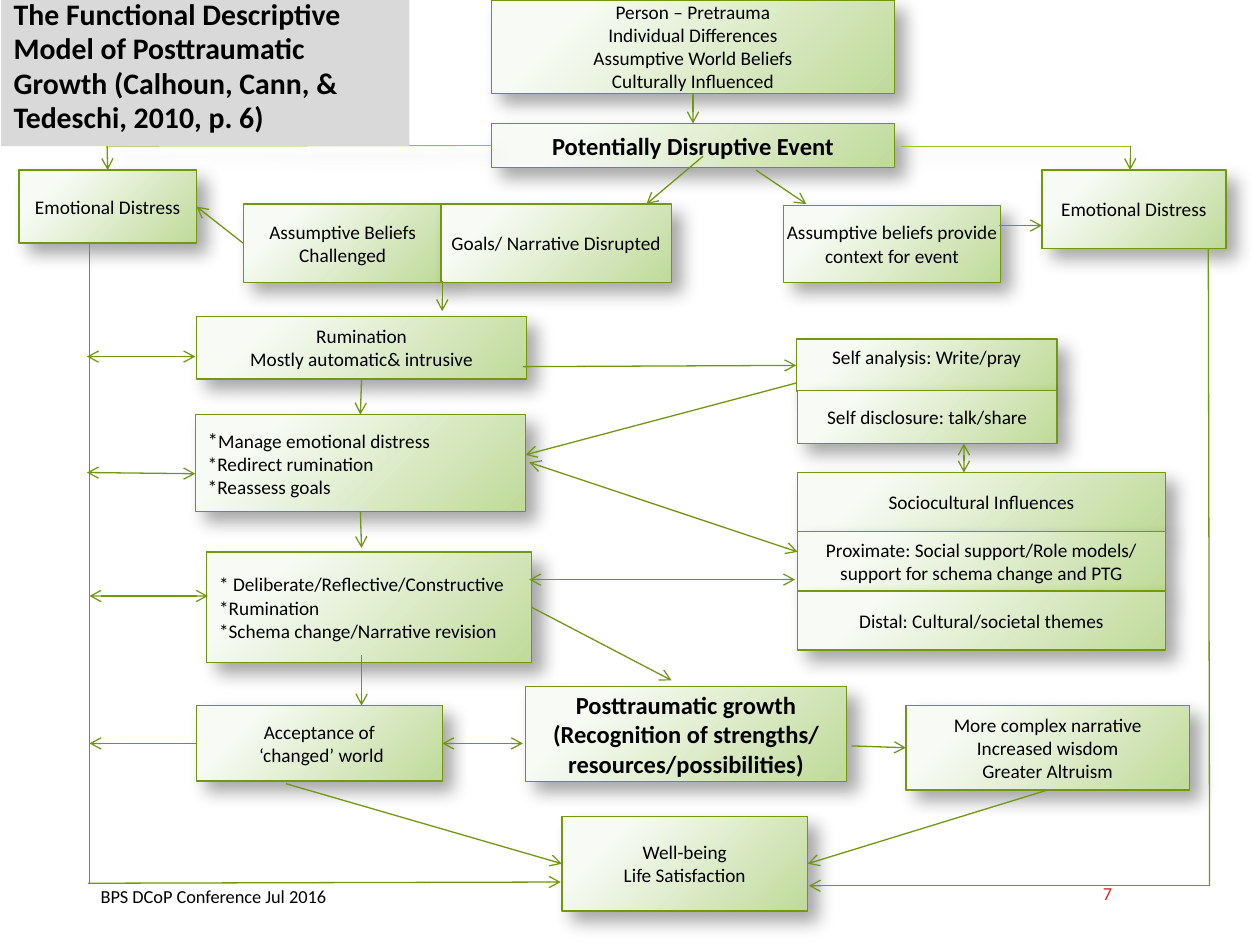
from math import dist
from pptx import Presentation
from pptx.dml.color import RGBColor
from pptx.enum.shapes import MSO_CONNECTOR, MSO_SHAPE
from pptx.enum.text import MSO_ANCHOR, PP_ALIGN
from pptx.oxml import parse_xml
from pptx.oxml.ns import nsdecls
from pptx.util import Inches, Pt

GREEN = "719713"
LIME = "98C723"
ALIGN = {"left": PP_ALIGN.LEFT, "center": PP_ALIGN.CENTER}
ANCHOR = {"top": MSO_ANCHOR.TOP, "middle": MSO_ANCHOR.MIDDLE,
          "bottom": MSO_ANCHOR.BOTTOM}

BOXES = [
    (3.9, 0, 3.2, 0.74, "Person – Pretrauma\nIndividual Differences\n"
     "Assumptive World Beliefs\nCulturally Influenced", {}),
    (3.9, 0.98, 3.2, 0.35, "Potentially Disruptive Event",
     {"size": 14, "bold": True}),
    (1.93, 1.62, 1.58, 0.62, "Assumptive Beliefs\nChallenged", {}),
    (3.5, 1.62, 1.83, 0.62, "Goals/ Narrative Disrupted", {}),
    (6.22, 1.63, 1.72, 0.61,
     "Assumptive beliefs provide\ncontext for event", {}),
    (1.56, 2.51, 2.62, 0.5, "Rumination\nMostly automatic& intrusive", {}),
    (6.32, 2.69, 2.07, 0.42, "Self analysis: Write/pray", {"anchor": "top"}),
    (6.33, 3.1, 2.06, 0.42, "Self disclosure: talk/share", {}),
    (1.55, 3.29, 2.62, 0.77, "*Manage emotional distress\n"
     "*Redirect rumination\n*Reassess goals", {"align": "left", "star": 12}),
    (1.64, 4.38, 2.58, 0.88, "* Deliberate/Reflective/Constructive\n"
     "*Rumination\n*Schema change/Narrative revision", {"align": "left"}),
    (4.17, 5.45, 2.55, 0.75, "Posttraumatic growth\n"
     "(Recognition of strengths/\nresources/possibilities)",
     {"size": 14, "bold": True}),
    (7.19, 5.6, 2.25, 0.67, "More complex narrative\nIncreased wisdom\n"
     "Greater Altruism", {}),
    (0.15, 1.35, 1.41, 0.58, "Emotional Distress", {}),
    (8.27, 1.35, 1.46, 0.62, "Emotional Distress", {}),
    (1.56, 5.6, 1.95, 0.6, "Acceptance of\n ‘changed’ world", {}),
    (4.46, 6.48, 1.95, 0.75, "Well-being\nLife Satisfaction", {}),
]

SOCIAL = [
    "Sociocultural Influences",
    "Proximate: Social support/Role models/\nsupport for schema change and PTG",
    "Distal: Cultural/societal themes",
]

PLAIN = [((0.71, 1.93), (0.71, 7.01)), ((9.59, 1.97), (9.6, 7.03))]

RAILS = [((7.15, 1.16), (8.97, 1.16)), ((0.85, 1.16), (3.9, 1.16))]

SINGLE = [
    ((5.58, 1.24), (5.13, 1.62)), ((6, 1.35), (6.4, 1.62)),
    ((1.93, 1.93), (1.56, 1.64)), ((0.7, 7.01), (4.45, 7)),
    ((2.27, 6.22), (4.46, 6.86)), ((8.32, 6.27), (6.42, 6.86)),
    ((1.56, 5.9), (0.71, 5.9)), ((6.76, 5.92), (7.19, 5.92)),
    ((4.22, 4.83), (5.33, 5.4)), ((4.15, 2.91), (6.32, 2.91)),
    ((6.32, 3.04), (4.17, 3.61)), ((7.93, 1.79), (8.27, 1.79)),
    ((2.87, 4.07), (2.87, 4.35)), ((8.97, 1.16), (8.97, 1.35)),
    ((2.87, 5.2), (2.87, 5.6)), ((5.51, 0.74), (5.51, 0.97)),
    ((3.51, 2.23), (3.51, 2.47)), ((0.85, 1.16), (0.85, 1.35)),
    ((2.86, 3.01), (2.86, 3.29)), ((9.6, 7.03), (6.42, 7.03)),
]

DOUBLE = [
    ((0.69, 2.83), (1.55, 2.83)), ((0.69, 3.75), (1.55, 3.76)),
    ((0.71, 4.73), (1.65, 4.73)), ((6.31, 4.6), (4.2, 4.6)),
    ((7.65, 3.52), (7.65, 3.75)), ((6.33, 4.38), (4.2, 3.67)),
    ((3.51, 5.9), (4.15, 5.9)),
]


def color(code):
    return RGBColor.from_string(code)


def write(shape, text, size=11, bold=False, ink="000000", align="center",
          anchor="middle", wrap=None, star=None, space=None, before=0):
    frame = shape.text_frame
    frame.word_wrap = align == "left" if wrap is None else wrap
    frame.vertical_anchor = ANCHOR[anchor]
    for row, line in enumerate(text.split("\n")):
        para = frame.paragraphs[0] if row == 0 else frame.add_paragraph()
        para.alignment = ALIGN[align]
        if space:
            para.line_spacing = space
        if row and before:
            para.space_before = Pt(before)
        parts = [(line, size)]
        if star and row == 0:
            parts = [(line[:1], star), (line[1:], size)]
        for part, points in parts:
            run = para.add_run()
            run.text = part
            run.font.name = "Calibri"
            run.font.size = Pt(points)
            run.font.bold = bold
            run.font.color.rgb = color(ink)


def shade(props):
    props.append(parse_xml(
        f'<a:effectLst {nsdecls("a")}><a:outerShdw blurRad="{Pt(10.2)}" '
        f'dist="{Pt(8)}" dir="2700000" algn="tl" rotWithShape="0">'
        '<a:srgbClr val="000000"><a:alpha val="35000"/></a:srgbClr>'
        '</a:outerShdw></a:effectLst>'))


def blend(props):
    props.insert(2, parse_xml(
        f'<a:gradFill {nsdecls("a")} rotWithShape="1"><a:gsLst>'
        '<a:gs pos="20000"><a:srgbClr val="F8FBF5"/></a:gs>'
        '<a:gs pos="100000"><a:srgbClr val="BFDA99"/></a:gs></a:gsLst>'
        '<a:path path="circle"><a:fillToRect l="-15000" t="-15000" '
        'r="115000" b="115000"/></a:path></a:gradFill>'))


def add_box(slide, left, top, width, height, text, **style):
    box = slide.shapes.add_shape(MSO_SHAPE.RECTANGLE, Inches(left),
                                 Inches(top), Inches(width), Inches(height))
    props = box._element.spPr
    blend(props)
    box.line.color.rgb = color(GREEN)
    box.line.width = Pt(0.75)
    shade(props)
    write(box, text, **style)
    return box


def find_site(boxes, point):
    spot = [Inches(value) for value in point]
    for box in boxes:
        mid = box.left + box.width // 2
        half = box.top + box.height // 2
        sites = [(mid, box.top), (box.left, half),
                 (mid, box.top + box.height), (box.left + box.width, half)]
        for site, place in enumerate(sites):
            if dist(spot, place) < Inches(0.02):
                return box, site
    return None


def add_line(slide, boxes, start, end, ends=(), ink=GREEN, width=0.75,
             shadow=False):
    line = slide.shapes.add_connector(
        MSO_CONNECTOR.STRAIGHT, *[Inches(value) for value in start + end])
    for point, join in ((start, line.begin_connect), (end, line.end_connect)):
        found = find_site(boxes, point)
        if found:
            join(*found)
    line.line.color.rgb = color(ink)
    line.line.width = Pt(width)
    for tag in ends:
        line.line._get_or_add_ln().append(
            parse_xml(f'<a:{tag} {nsdecls("a")} type="arrow"/>'))
    props = line._element.spPr
    if shadow:
        shade(props)
    else:
        props.append(parse_xml(f'<a:effectLst {nsdecls("a")}/>'))


def add_label(slide, left, top, width, height, text, **style):
    label = slide.shapes.add_textbox(Inches(left), Inches(top),
                                     Inches(width), Inches(height))
    write(label, text, wrap=True, **style)
    return label


def main():
    deck = Presentation()
    deck.slide_width, deck.slide_height = Inches(10), Inches(7.5)
    slide = deck.slides.add_slide(deck.slide_layouts[6])

    boxes = [add_box(slide, *place, text, **style)
             for *place, text, style in BOXES]
    boxes += [add_box(slide, 6.33, 3.75 + row * 0.47, 2.92, 0.47, text)
              for row, text in enumerate(SOCIAL)]

    for pair in RAILS:
        add_line(slide, boxes, *pair, ink=LIME, width=0.5, shadow=True)
    for group, ends in ((PLAIN, ()), (SINGLE, ("tailEnd",)),
                        (DOUBLE, ("headEnd", "tailEnd"))):
        for pair in group:
            add_line(slide, boxes, *pair, ends=ends)

    add_label(slide, 8.5, 7, 0.58, 0.17, "7", size=10.5, ink="D1282E")
    add_label(slide, 0.7, 7.08, 3.09, 0.17, "BPS DCoP Conference Jul 2016",
              size=10.5, align="left", anchor="bottom")
    title = add_label(
        slide, 0.01, -0.03, 3.24, 1.19,
        "The Functional Descriptive\nModel of Posttraumatic\n"
        "Growth (Calhoun, Cann, &\nTedeschi, 2010, p. 6)",
        size=17, bold=True, align="left", anchor="top", space=0.8, before=3.4)
    title.fill.solid()
    title.fill.fore_color.rgb = color("D9D9D9")
    deck.save("out.pptx")


if __name__ == "__main__":
    main()
